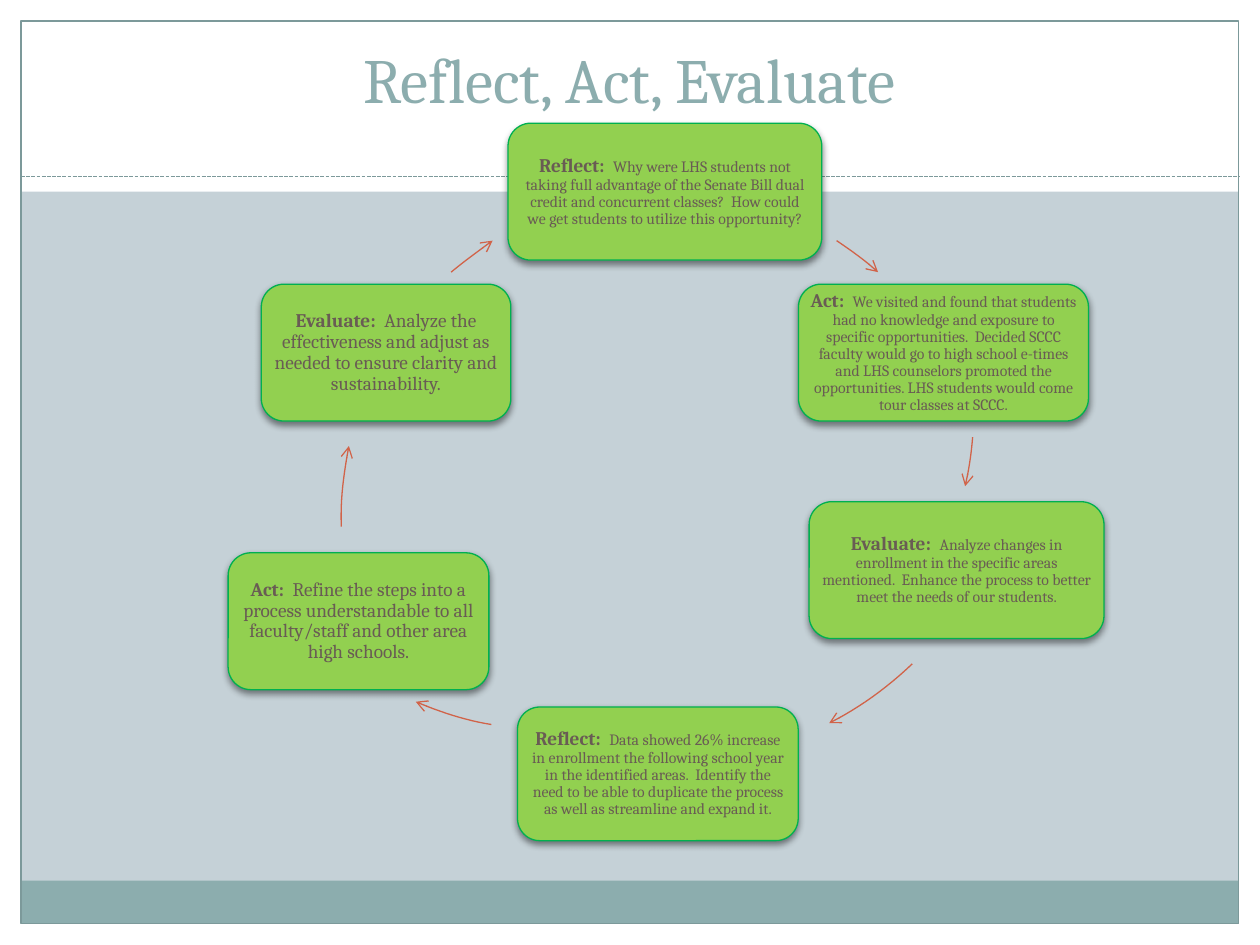
from lxml import etree
from pptx import Presentation
from pptx.dml.color import RGBColor
from pptx.enum.dml import MSO_LINE
from pptx.enum.shapes import MSO_CONNECTOR, MSO_SHAPE
from pptx.enum.text import MSO_ANCHOR, PP_ALIGN
from pptx.oxml.ns import qn
from pptx.util import Pt

RECT, ROUNDED = MSO_SHAPE.RECTANGLE, MSO_SHAPE.ROUNDED_RECTANGLE
STRAIGHT, DASH = MSO_CONNECTOR.STRAIGHT, MSO_LINE.SQUARE_DOT
CENTER, MIDDLE, BOTTOM = PP_ALIGN.CENTER, MSO_ANCHOR.MIDDLE, MSO_ANCHOR.BOTTOM

WHITE = RGBColor(0xFF, 0xFF, 0xFF)
PALE_BLUE = RGBColor(0xC5, 0xD1, 0xD7)
TEAL = RGBColor(0x8C, 0xAD, 0xAE)
DARK_TEAL = RGBColor(0x7C, 0x99, 0x9A)
LIME = RGBColor(0x92, 0xD0, 0x50)
GREEN = RGBColor(0x00, 0xB0, 0x50)
BROWN = RGBColor(0x69, 0x5C, 0x54)
RUST = RGBColor(0xD1, 0x63, 0x49)

FONT = "Cambria"
WIDTH, HEIGHT, MARGIN = 720, 540, 12.1
HEADER_HEIGHT, RULE_TOP = 109.5, 100.8
FOOTER_TOP, FOOTER_HEIGHT = 503.3, 24.6
LABEL_SIZE = 11
SIDE_INSET, END_INSET = 2.8, 3.8

TITLE = "Reflect, Act, Evaluate"

# Label, text, text size, (left, top, width, height), clockwise from the top
STEPS = [
    ("Reflect:", "Why were LHS students not taking full advantage of the Senate Bill "
     "dual credit and concurrent classes?  How could we get students to utilize "
     "this opportunity?", 9, (290.3, 70.4, 179.3, 78.2)),
    ("Act:", "We visited and found that students had no knowledge and exposure to "
     "specific opportunities.  Decided SCCC faculty would go to high school e-times "
     "and LHS counselors promoted the opportunities. LHS students would come tour "
     "classes at SCCC.", 9, (456.3, 162.4, 165.7, 78.2)),
    ("Evaluate:", "Analyze changes in enrollment in the specific areas mentioned.  "
     "Enhance the process to better meet the needs of our students.",
     9, (462.4, 286.7, 168.5, 78.2)),
    ("Reflect:", "Data showed 26% increase in enrollment the following school year in "
     "the identified areas.  Identify the need to be able to duplicate the process "
     "as well as streamline and expand it.", 9, (295.7, 404, 160.4, 76.4)),
    ("Act:", "Refine the steps into a process understandable to all faculty/staff and "
     "other area high schools.", 11, (130.4, 315.9, 149, 78.2)),
    ("Evaluate:", "Analyze the effectiveness and adjust as needed to ensure clarity "
     "and sustainability.", 11, (149.3, 162.4, 142.6, 78.2)),
]

# Bezier points of each arrow: start, two controls, tip
ARROWS = [
    ((478.1, 137.5), (486.7, 143.3), (494.6, 149), (501.8, 155.5)),
    ((555.8, 249.8), (555.1, 259.2), (553.7, 268.6), (551.5, 277.9)),
    ((521.3, 379.4), (506.9, 393.1), (491, 404.6), (473.8, 413.3)),
    ((280.8, 414), (266.4, 411.8), (251.3, 406.8), (237.6, 401)),
    ((195.1, 301), (194.4, 285.1), (196.6, 270), (199.4, 254.9)),
    ((257.8, 155.5), (265.7, 149), (273.6, 143.3), (281.5, 137.5)),
]
CURVE_STEPS = 12


def add_panel(kind, box, fill=None, line=None):
    panel = slide.shapes.add_shape(kind, *map(Pt, box))
    panel.shadow.inherit = False
    if fill is None:
        panel.fill.background()
    else:
        panel.fill.solid()
        panel.fill.fore_color.rgb = fill
    if line is None:
        panel.line.fill.background()
    else:
        panel.line.color.rgb = line
        panel.line.width = Pt(0.75)
    return panel


def add_drop_shadow(card):
    effects = card.element.spPr.find(qn("a:effectLst"))
    shadow = etree.SubElement(effects, qn("a:outerShdw"), blurRad=str(Pt(4)),
                              dist=str(Pt(2)), dir="5400000", rotWithShape="0")
    black = etree.SubElement(shadow, qn("a:srgbClr"), val="000000")
    etree.SubElement(black, qn("a:alpha"), val="45000")


def style_run(run, size, color, bold=False):
    run.font.name, run.font.size, run.font.bold = FONT, Pt(size), bold
    run.font.color.rgb = color


def add_step(label, text, size, box):
    card = add_panel(ROUNDED, box, LIME, GREEN)
    add_drop_shadow(card)
    frame = card.text_frame
    frame.word_wrap, frame.vertical_anchor = True, MIDDLE
    frame.margin_left = frame.margin_right = Pt(SIDE_INSET)
    frame.margin_top = frame.margin_bottom = Pt(END_INSET)
    paragraph = frame.paragraphs[0]
    paragraph.alignment, paragraph.line_spacing = CENTER, 0.9
    for words, points, bold in ((label + "  ", LABEL_SIZE, True), (text, size, False)):
        run = paragraph.add_run()
        run.text = words
        style_run(run, points, BROWN, bold)


def bezier_point(points, t):
    weights = ((1 - t) ** 3, 3 * t * (1 - t) ** 2, 3 * t ** 2 * (1 - t), t ** 3)
    return tuple(Pt(sum(w * p[axis] for w, p in zip(weights, points)))
                 for axis in (0, 1))


def add_curved_arrow(points):
    curve = [bezier_point(points, i / CURVE_STEPS) for i in range(CURVE_STEPS + 1)]
    builder = slide.shapes.build_freeform(*curve[0], scale=1.0)
    builder.add_line_segments(curve[1:], close=False)
    arrow = builder.convert_to_shape()
    arrow.shadow.inherit = False
    arrow.fill.background()
    arrow.line.color.rgb = RUST
    arrow.line.width = Pt(0.75)
    outline = arrow.element.spPr.find(qn("a:ln"))
    etree.SubElement(outline, qn("a:tailEnd"), type="arrow")


prs = Presentation()
prs.slide_width, prs.slide_height = Pt(WIDTH), Pt(HEIGHT)
slide = prs.slides.add_slide(prs.slide_layouts[5])
slide.background.fill.solid()
slide.background.fill.fore_color.rgb = PALE_BLUE

# White border and header, footer band, outline
inner_width, inner_height = WIDTH - 2 * MARGIN, HEIGHT - 2 * MARGIN
for white_box in (
    (0, HEIGHT - MARGIN, WIDTH, MARGIN),
    (0, 0, WIDTH, HEADER_HEIGHT),
    (0, 0, MARGIN, HEIGHT),
    (WIDTH - MARGIN, 0, MARGIN, HEIGHT),
):
    add_panel(RECT, white_box, WHITE)
add_panel(RECT, (MARGIN, FOOTER_TOP, inner_width, FOOTER_HEIGHT), TEAL)
add_panel(RECT, (MARGIN, MARGIN, inner_width, inner_height), line=DARK_TEAL)

# Dashed rule under the title
rule = slide.shapes.add_connector(STRAIGHT, Pt(MARGIN), Pt(RULE_TOP),
                                  Pt(WIDTH - MARGIN), Pt(RULE_TOP))
rule.line.color.rgb = DARK_TEAL
rule.line.width = Pt(0.75)
rule.line.dash_style = DASH
etree.SubElement(rule.element.spPr, qn("a:effectLst"))

# Title, brought in front of the header
title = slide.shapes.title
rule.element.addnext(title.element)
title.left, title.top, title.width, title.height = map(Pt, (43.2, 10.8, 633, 59))
title.text_frame.text = TITLE
title.text_frame.vertical_anchor = BOTTOM
title.text_frame.paragraphs[0].alignment = CENTER
style_run(title.text_frame.paragraphs[0].runs[0], 36, TEAL)

# Cycle
for step, arrow_points in zip(STEPS, ARROWS):
    add_step(*step)
    add_curved_arrow(arrow_points)

prs.save("out.pptx")
